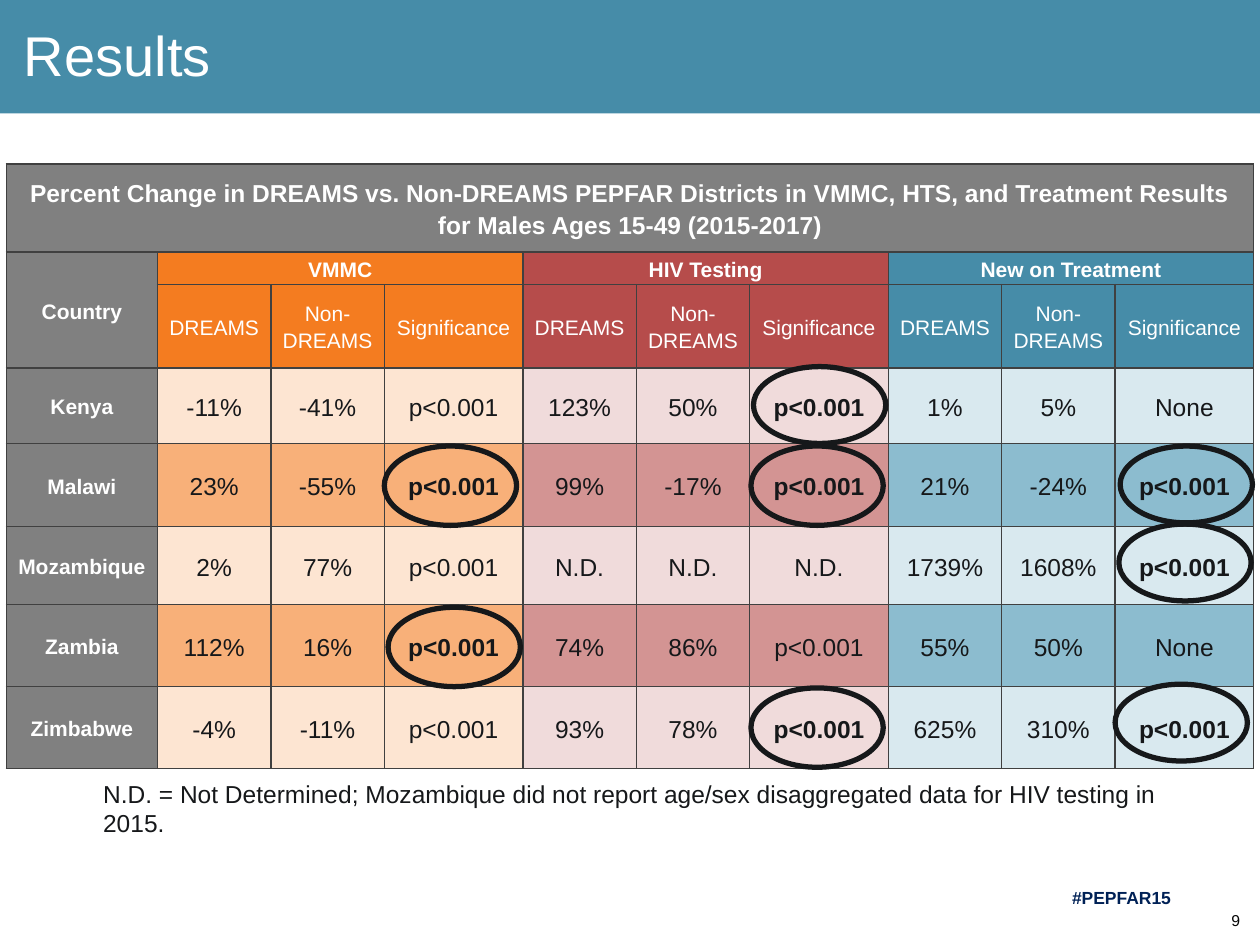
from lxml.etree import SubElement
from pptx import Presentation
from pptx.dml.color import RGBColor as Color
from pptx.enum.shapes import MSO_SHAPE as Shape
from pptx.enum.text import MSO_ANCHOR as Anchor, MSO_AUTO_SIZE as Fit, PP_ALIGN as Align
from pptx.oxml.ns import qn
from pptx.util import Inches, Pt

FONT = "Arial"
COLORS = {
    "white": "FFFFFF", "ink": "16181A", "number": "060606", "navy": "002156",
    "gray": "808080", "border": "404040", "teal": "468CA8",
}
# Header, odd-row and even-row fills of each group of columns
GROUPS = {
    "VMMC": ("F47C20", "FDE5D2", "F8B079"),
    "HIV Testing": ("B64C4B", "F0DBDB", "D39493"),
    "New on Treatment": ("468CA8", "D9E9EF", "8CBCCF"),
}
MEASURES = ["DREAMS", "Non-DREAMS", "Significance"]
COUNTRIES = {
    "Kenya": ["-11%", "-41%", "p<0.001", "123%", "50%", "p<0.001", "1%", "5%", "None"],
    "Malawi": ["23%", "-55%", "p<0.001", "99%", "-17%", "p<0.001", "21%", "-24%", "p<0.001"],
    "Mozambique": ["2%", "77%", "p<0.001", "N.D.", "N.D.", "N.D.", "1739%", "1608%", "p<0.001"],
    "Zambia": ["112%", "16%", "p<0.001", "74%", "86%", "p<0.001", "55%", "50%", "None"],
    "Zimbabwe": ["-4%", "-11%", "p<0.001", "93%", "78%", "p<0.001", "625%", "310%", "p<0.001"],
}
# Table row and column of a circled cell: offset from its corner, ring height
RINGS = {
    (4, 3): (0, 0.2, 6.3), (6, 3): (0.3, 0.2, 6.3),
    (7, 6): (0.1, 0.1, 6.3), (4, 6): (0.1, 0.2, 6.3), (3, 6): (0.3, -0.1, 6.1),
    (4, 9): (0.4, 0.2, 6.1), (5, 9): (0.3, -0.2, 6.1), (7, 9): (0, -0.2, 6.1),
}
# Lengths are in cells of a grid of 100 columns and 75 rows
TABLE_LEFT, TABLE_TOP = 0.5, 13
COLUMN_WIDTHS = [12] + [9, 9, 11] * len(GROUPS)
ROW_HEIGHTS = [7, 2.6, 6.6, 6, 6.6, 6.2, 6.5, 6.5]


def write(frame, text, size=14, color="ink", bold=False, align=Align.LEFT, spacing=None):
    """Fill a text frame, one paragraph for each line of the text."""
    frame.word_wrap = True
    for index, line in enumerate(text.split("\n")):
        para = frame.add_paragraph() if index else frame.paragraphs[0]
        para.alignment = align
        para.space_before = Pt(0)
        if spacing:
            para.line_spacing = spacing
        span = para.add_run()
        span.text = line
        span.font.name, span.font.size, span.font.bold = FONT, Pt(size), bold
        span.font.color.rgb = Color.from_string(COLORS[color])


def add_borders(cell):
    properties = cell._tc.get_or_add_tcPr()
    for index, side in enumerate(("lnL", "lnR", "lnT", "lnB")):
        line = properties.makeelement(qn(f"a:{side}"), {"w": str(Pt(1))})
        fill = SubElement(line, qn("a:solidFill"))
        SubElement(fill, qn("a:srgbClr"), val=COLORS["border"])
        properties.insert(index, line)


class ResultsSlide:
    def __init__(self, deck):
        self.column = deck.slide_width / 100
        self.row = deck.slide_height / 75
        self.page = deck.slides.add_slide(deck.slide_layouts[5])

    def place(self, left, top, width, height):
        """Turn grid cells into slide lengths."""
        return (round(left * self.column), round(top * self.row),
                round(width * self.column), round(height * self.row))

    def shape(self, kind, *area, fill=None, line=None):
        shape = self.page.shapes.add_shape(kind, *self.place(*area))
        shape.shadow.inherit = False
        if fill:
            shape.fill.solid()
            shape.fill.fore_color.rgb = Color.from_string(COLORS[fill])
        else:
            shape.fill.background()
        if line:
            shape.line.color.rgb = Color.from_string(COLORS[line])
            shape.line.width = Pt(3)
        else:
            shape.line.fill.background()
        return shape

    def title(self, text, *area):
        title = self.page.shapes.title
        title.left, title.top, title.width, title.height = self.place(*area)
        frame = title.text_frame
        frame.margin_left = frame.margin_right = frame.margin_top = frame.margin_bottom = 0
        frame.vertical_anchor = Anchor.TOP
        frame.auto_size = Fit.NONE
        write(frame, text, size=32, color="white", spacing=0.9)
        banner = self.shape(Shape.RECTANGLE, 0, 0, 100, 9, fill="teal")
        title.element.addprevious(banner.element)

    def text(self, text, *area, anchor=Anchor.TOP, **style):
        box = self.page.shapes.add_textbox(*self.place(*area))
        box.text_frame.vertical_anchor = anchor
        write(box.text_frame, text, **style)

    def cell(self, row, column, text, fill, **style):
        cell = self.grid.cell(row, column)
        cell.vertical_anchor = Anchor.MIDDLE
        cell.margin_left = cell.margin_right = Inches(0.07)
        cell.margin_top = cell.margin_bottom = 0
        cell.fill.solid()
        cell.fill.fore_color.rgb = Color.from_string(fill)
        write(cell.text_frame, text, align=Align.CENTER, spacing=1.15, **style)

    def merge(self, first, last):
        self.grid.cell(*first).merge(self.grid.cell(*last))

    def table(self, heading):
        area = self.place(TABLE_LEFT, TABLE_TOP, sum(COLUMN_WIDTHS), sum(ROW_HEIGHTS))
        self.grid = self.page.shapes.add_table(len(ROW_HEIGHTS), len(COLUMN_WIDTHS), *area).table
        for column, width in zip(self.grid.columns, COLUMN_WIDTHS):
            column.width = round(width * self.column)
        for row, height in zip(self.grid.rows, ROW_HEIGHTS):
            row.height = round(height * self.row)
        label = {"size": 12, "color": "white"}
        self.merge((0, 0), (0, len(COLUMN_WIDTHS) - 1))
        self.cell(0, 0, heading, COLORS["gray"], color="white", bold=True)
        self.merge((1, 0), (2, 0))
        self.cell(1, 0, "Country", COLORS["gray"], bold=True, **label)
        for row, country in enumerate(COUNTRIES, 3):
            self.cell(row, 0, country, COLORS["gray"], bold=True, **label)
        for group, (name, (header, *bands)) in enumerate(GROUPS.items()):
            start = 1 + group * len(MEASURES)
            self.merge((1, start), (1, start + len(MEASURES) - 1))
            self.cell(1, start, name, header, bold=True, **label)
            for column, measure in enumerate(MEASURES, start):
                self.cell(2, column, measure, header, **label)
                for row, values in enumerate(COUNTRIES.values(), 3):
                    self.cell(row, column, values[column - 1], bands[(row - 3) % 2],
                              bold=(row, column) in RINGS)
        for cell in self.grid.iter_cells():
            add_borders(cell)

    def rings(self):
        for (row, column), (right, down, height) in RINGS.items():
            left = TABLE_LEFT + sum(COLUMN_WIDTHS[:column]) + right
            top = TABLE_TOP + sum(ROW_HEIGHTS[:row]) + down
            self.shape(Shape.OVAL, left, top, 10.5, height, line="ink")


def main():
    deck = Presentation()
    deck.slide_width, deck.slide_height = Inches(10), Inches(7.5)
    slide = ResultsSlide(deck)
    slide.title("Results", 1.9, 2.2, 95.9, 5)
    slide.text("9", 94.6, 71, 4.8, 4, anchor=Anchor.MIDDLE,
               size=9, color="number", align=Align.RIGHT)
    slide.text("#PEPFAR15", 84.1, 69.9, 9.9, 2.7, size=10, color="navy", bold=True)
    slide.table("Percent Change in DREAMS vs. Non-DREAMS PEPFAR Districts in VMMC, HTS, "
                "and Treatment Results\nfor Males Ages 15-49 (2015-2017)")
    slide.text("N.D. = Not Determined; Mozambique did not report age/sex disaggregated "
               "data for HIV testing in 2015.", 7.2, 61.3, 90.6, 3.4)
    slide.rings()
    deck.save("out.pptx")


if __name__ == "__main__":
    main()
